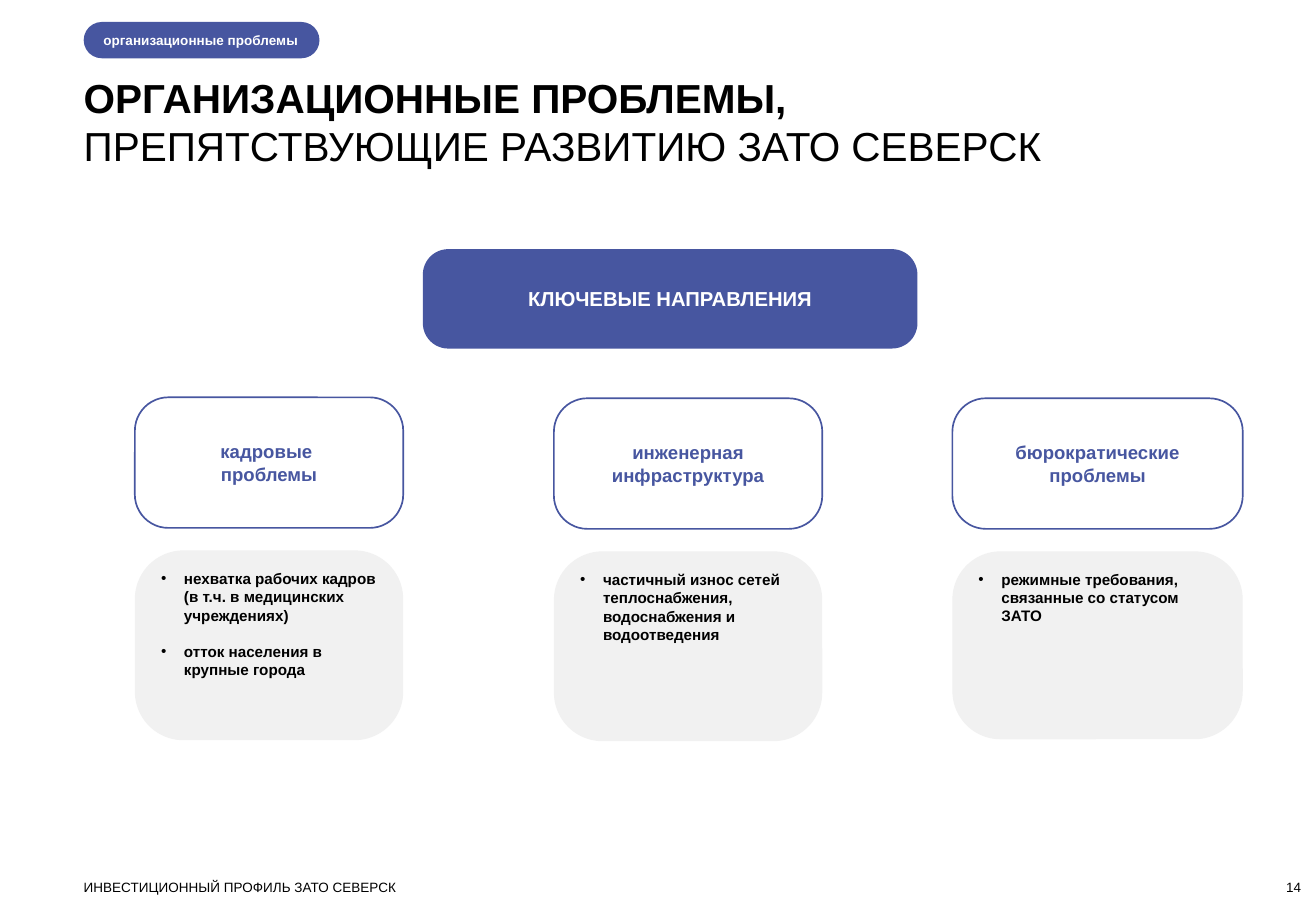
from pptx import Presentation
from pptx.dml.color import RGBColor
from pptx.enum.shapes import MSO_SHAPE
from pptx.enum.text import MSO_ANCHOR, PP_ALIGN
from pptx.util import Cm, Pt
from lxml import etree

ROUND = MSO_SHAPE.ROUNDED_RECTANGLE
TOP, MIDDLE, BOTTOM = MSO_ANCHOR.TOP, MSO_ANCHOR.MIDDLE, MSO_ANCHOR.BOTTOM
LEFT, CENTER, RIGHT = PP_ALIGN.LEFT, PP_ALIGN.CENTER, PP_ALIGN.RIGHT
BLUE, GREY, WHITE, BLACK = "4756A0", "F1F1F1", "FFFFFF", "000000"
FONT = "Arial"
NS = "{http://schemas.openxmlformats.org/drawingml/2006/main}"
EDGE = 1.75  # left margin of the page, cm
CURVE = 0.256
INSETS = (0.25, 0.13, 0.25, 0.13)

# Box of each column (left, top, width, height), its heading and its list
COLUMNS = [
    ((2.82, 8.31, 5.61, 7.17), "кадровые \vпроблемы",
     ["нехватка рабочих кадров (в т.ч. в медицинских учреждениях)",
      "отток населения в крупные города"]),
    ((11.58, 8.33, 5.61, 7.17), "инженерная инфраструктура",
     ["частичный износ сетей теплоснабжения, водоснабжения и водоотведения"]),
    ((19.91, 8.33, 6.07, 7.13), "бюрократические проблемы",
     ["режимные требования, связанные со статусом ЗАТО"]),
]


def color(code):
    return RGBColor.from_string(code)


def write(shape, lines, size, ink=BLACK, bold=False, align=LEFT,
          anchor=TOP, insets=(0, 0, 0, 0)):
    frame = shape.text_frame
    frame.word_wrap = True
    frame.vertical_anchor = anchor
    (frame.margin_left, frame.margin_top,
     frame.margin_right, frame.margin_bottom) = map(Cm, insets)
    frame.text = "\n".join(lines)
    for para in frame.paragraphs:
        para.alignment = align
        for run in para.runs:
            font = run.font
            font.name, font.size, font.bold = FONT, Pt(size), bold
            font.color.rgb = color(ink)
    return frame


def panel(slide, box, fill=None, line=None, curve=CURVE):
    shape = slide.shapes.add_shape(ROUND, *map(Cm, box))
    shape.shadow.inherit = False
    shape.adjustments[0] = curve
    if fill:
        shape.fill.solid()
        shape.fill.fore_color.rgb = color(fill)
    else:
        shape.fill.background()
    if line:
        shape.line.color.rgb = color(line)
        shape.line.width = Pt(1)
    else:
        shape.line.fill.background()
    return shape


def bullet(para):
    props = para._p.get_or_add_pPr()
    props.set("marL", str(Cm(0.48)))
    props.set("indent", str(-Cm(0.48)))
    etree.SubElement(props, NS + "buFont", typeface=FONT)
    etree.SubElement(props, NS + "buChar", char="•")


def header(slide, box):
    left, top, width, height = box
    # Section tag
    tag = panel(slide, (left, top, 4.93, 0.76), fill=BLUE, curve=0.5)
    write(tag, ["организационные проблемы"], 8, WHITE, True,
          anchor=MIDDLE, insets=(0.3, 0, 0, 0))
    # Title: bold first line, regular second line
    title = slide.shapes.title
    title.left, title.top = Cm(left), Cm(top + 1.06)
    title.width, title.height = Cm(width), Cm(height - 1.06)
    frame = write(title, ["ОРГАНИЗАЦИОННЫЕ ПРОБЛЕМЫ,",
                          "ПРЕПЯТСТВУЮЩИЕ РАЗВИТИЮ ЗАТО СЕВЕРСК"], 24)
    frame.paragraphs[0].runs[0].font.bold = True


def banner(slide, box):
    write(panel(slide, box, fill=BLUE), ["КЛЮЧЕВЫЕ НАПРАВЛЕНИЯ"], 12, WHITE,
          True, CENTER, MIDDLE, INSETS)


def column(slide, box, name, items):
    left, top, width, height = box
    # Outlined heading
    head = panel(slide, (left, top, width, 2.73), line=BLUE)
    write(head, [name], 11, BLUE, True, CENTER, MIDDLE, INSETS)
    # Grey list
    card = panel(slide, (left, top + 3.2, width, height - 3.2), fill=GREY)
    frame = write(card, items, 9, bold=True, insets=(0.25, 0.1, 0.25, 0.13))
    for para in frame.paragraphs:
        bullet(para)
    for para in frame.paragraphs[1:]:
        para.space_before = Pt(10.5)


def footer(slide, box):
    left, top, width, height = box
    note = slide.shapes.add_textbox(*map(Cm, (left, top, 7.5, height)))
    write(note, ["ИНВЕСТИЦИОННЫЙ ПРОФИЛЬ ЗАТО СЕВЕРСК"], 8)
    page = slide.shapes.add_textbox(
        *map(Cm, (left + width - 2.03, top, 2.03, height)))
    write(page, ["14"], 8, align=RIGHT, anchor=BOTTOM)


def main():
    deck = Presentation()
    deck.slide_width, deck.slide_height = Cm(27.51), Cm(19.05)
    slide = deck.slides.add_slide(deck.slide_layouts[5])
    header(slide, (EDGE, 0.46, 25.45, 3.12))
    banner(slide, (8.84, 5.21, 10.34, 2.08))
    for box, name, items in COLUMNS:
        column(slide, box, name, items)
    footer(slide, (EDGE, 18.38, 25.45, 0.33))
    deck.save("out.pptx")


if __name__ == "__main__":
    main()
